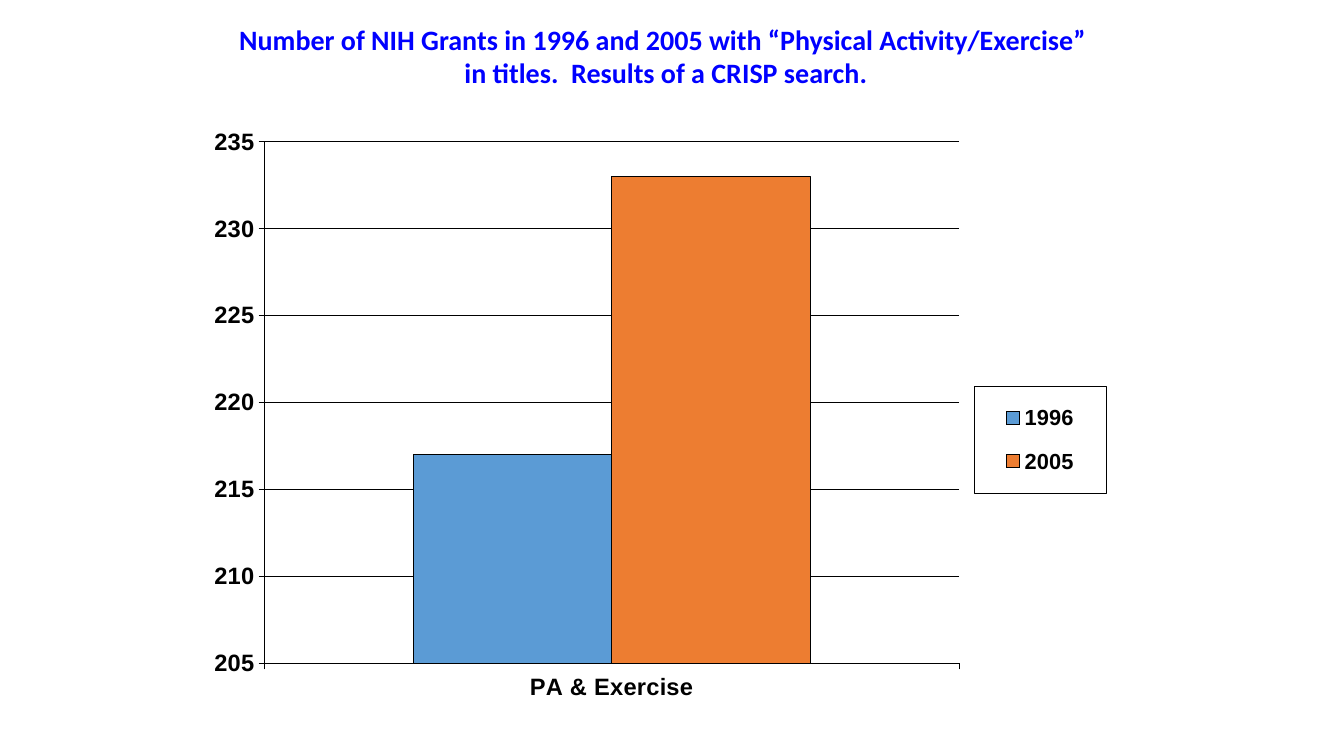
"""Build a slide with a column chart of NIH grants in 1996 and 2005."""
from lxml.etree import SubElement
from pptx import Presentation
from pptx.chart.data import CategoryChartData
from pptx.dml.color import RGBColor
from pptx.enum.chart import XL_CHART_TYPE, XL_LEGEND_POSITION, XL_TICK_LABEL_POSITION, XL_TICK_MARK
from pptx.enum.text import MSO_ANCHOR, MSO_AUTO_SIZE, PP_ALIGN
from pptx.oxml.ns import qn
from pptx.util import Inches, Pt

TITLE_LINES = [
    "Number of NIH Grants in 1996 and 2005 with “Physical Activity/Exercise” ",
    "in titles.  Results of a CRISP search.",
]
TITLE_BOX = (2.24, 0.17, 8.73, 0.77)
CHART_BOX = (1.72, 1.27, 9.31, 6.17)
CATEGORIES = ["PA & Exercise"]
SERIES = [("1996", 217, "5B9BD5"), ("2005", 233, "ED7D31")]
PLOT_AREA = (0.097, 0.022, 0.74, 0.839)
LEGEND_AREA = (0.853, 0.415, 0.141, 0.172)
BLACK = "000000"


def color(hex_string):
    return RGBColor.from_string(hex_string)


def style_font(font, name, size, hex_string):
    font.name = name
    font.size = Pt(size)
    font.bold = True
    font.color.rgb = color(hex_string)


def style_line(line, width):
    line.color.rgb = color(BLACK)
    line.width = Pt(width)


def place(element, area, index, inner=False):
    for old_layout in element.findall(qn("c:layout")):
        element.remove(old_layout)
    layout = SubElement(element, qn("c:layout"))
    element.insert(index, layout)
    manual = SubElement(layout, qn("c:manualLayout"))
    settings = [("layoutTarget", "inner")] if inner else []
    settings += [("xMode", "edge"), ("yMode", "edge")]
    settings += zip("xywh", area)
    for tag, value in settings:
        SubElement(manual, qn(f"c:{tag}")).set("val", str(value))


def add_title(slide):
    title = slide.shapes.title
    title.left, title.top, title.width, title.height = map(Inches, TITLE_BOX)
    frame = title.text_frame
    frame.text = "\n".join(TITLE_LINES)
    frame.word_wrap = False
    frame.auto_size = MSO_AUTO_SIZE.SHAPE_TO_FIT_TEXT
    frame.vertical_anchor = MSO_ANCHOR.TOP
    for paragraph in frame.paragraphs:
        paragraph.alignment = PP_ALIGN.CENTER
        style_font(paragraph.font, "Calibri", 20, "0000FF")


def add_grants_chart(slide):
    data = CategoryChartData()
    data.categories = CATEGORIES
    for name, value, _ in SERIES:
        data.add_series(name, [value])
    chart = slide.shapes.add_chart(
        XL_CHART_TYPE.COLUMN_CLUSTERED, *map(Inches, CHART_BOX), data
    ).chart
    chart.has_title = False
    style_font(chart.font, "Arial", 16.9, BLACK)

    plot = chart.plots[0]
    plot.gap_width = 150
    plot.overlap = 0
    plot.vary_by_categories = False
    for series, (_, _, fill_color) in zip(plot.series, SERIES):
        series.format.fill.solid()
        series.format.fill.fore_color.rgb = color(fill_color)
        style_line(series.format.line, 0.94)

    for axis in (chart.category_axis, chart.value_axis):
        axis.major_tick_mark = XL_TICK_MARK.OUTSIDE
        axis.minor_tick_mark = XL_TICK_MARK.NONE
        style_font(axis.tick_labels.font, "Arial", 16.9, BLACK)
        style_line(axis.format.line, 0.25)
    chart.category_axis.tick_label_position = XL_TICK_LABEL_POSITION.LOW
    value_axis = chart.value_axis
    value_axis.minimum_scale, value_axis.maximum_scale = 205, 235
    value_axis.major_unit = 5
    value_axis.has_major_gridlines = True
    style_line(value_axis.major_gridlines.format.line, 0.25)

    chart.has_legend = True
    legend = chart.legend
    legend.position = XL_LEGEND_POSITION.RIGHT
    legend.include_in_layout = False
    style_font(legend.font, "Arial", 15.6, BLACK)
    chart_element = chart.element.find(qn("c:chart"))
    legend_element = chart_element.find(qn("c:legend"))
    place(chart_element.find(qn("c:plotArea")), PLOT_AREA, 0, inner=True)
    place(legend_element, LEGEND_AREA, 1)
    add_legend_border(legend_element)


def add_legend_border(legend_element):
    properties = SubElement(legend_element, qn("c:spPr"))
    legend_element.find(qn("c:txPr")).addprevious(properties)
    line = SubElement(properties, qn("a:ln"), w=str(Pt(0.25)))
    fill = SubElement(line, qn("a:solidFill"))
    SubElement(fill, qn("a:srgbClr"), val=BLACK)


def main():
    presentation = Presentation()
    presentation.slide_width = Inches(13.33)
    presentation.slide_height = Inches(7.5)
    slide = presentation.slides.add_slide(presentation.slide_layouts.get_by_name("Title Only"))
    add_grants_chart(slide)
    add_title(slide)
    presentation.save("out.pptx")


if __name__ == "__main__":
    main()
